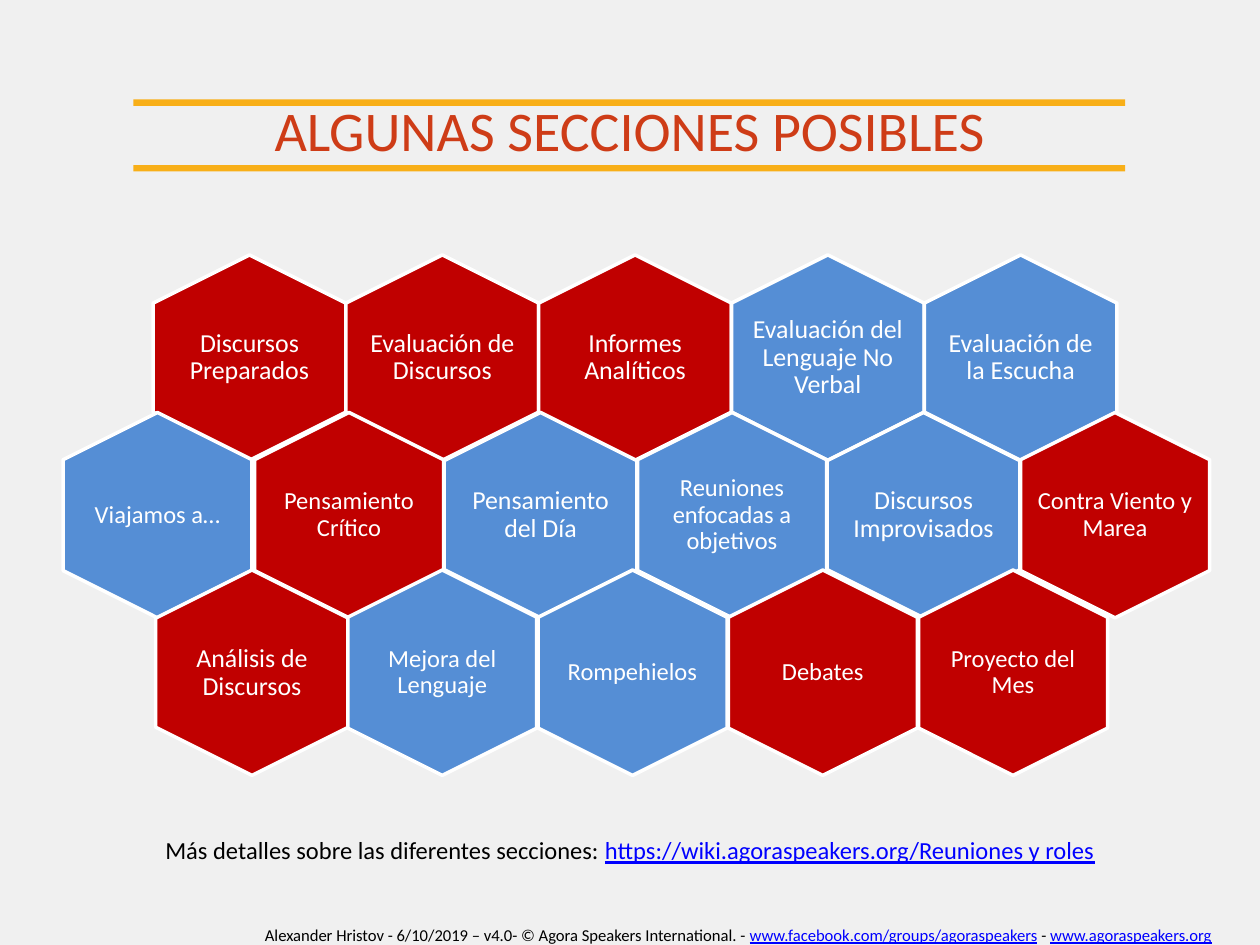
from dataclasses import dataclass

from pptx import Presentation, util as u
from pptx.dml.color import RGBColor
from pptx.enum import shapes, text

SLIDE_W, SLIDE_H = u.Inches(10), u.Inches(7.5)


@dataclass(frozen=True)
class Theme:
    font: str = "Calibri"
    background: str = "F0F0F0"
    rule: str = "F8AF18"
    title: str = "CE3C17"
    body: str = "000000"
    link: str = "0000FF"
    red: str = "C00000"
    blue: str = "558ED5"
    white: str = "FFFFFF"
    title_size: float = 32
    large: float = 14.8
    small: float = 14
    footer_size: float = 9.5


THEME = Theme()
RED, BLUE = THEME.red, THEME.blue
LARGE, SMALL = THEME.large, THEME.small

# Each row: first centre and pitch (% of slide width), then its cells.
ROWS = [
    (19.8, 15.3, [
        ("Discursos Preparados", RED, LARGE),
        ("Evaluación de Discursos", RED, LARGE),
        ("Informes Analíticos", RED, LARGE),
        ("Evaluación del Lenguaje No Verbal", BLUE, LARGE),
        ("Evaluación de la Escucha", BLUE, LARGE),
    ]),
    (12.5, 15.2, [
        ("Viajamos a…", BLUE, SMALL),
        ("Pensamiento Crítico", RED, SMALL),
        ("Pensamiento del Día", BLUE, LARGE),
        ("Reuniones enfocadas a objetivos", BLUE, SMALL),
        ("Discursos Improvisados", BLUE, LARGE),
        ("Contra Viento y Marea", RED, SMALL),
    ]),
    (20, 15.1, [
        ("Análisis de Discursos", RED, LARGE),
        ("Mejora del Lenguaje", BLUE, SMALL),
        ("Rompehielos", BLUE, SMALL),
        ("Debates", RED, SMALL),
        ("Proyecto del Mes", RED, SMALL),
    ]),
]
FIRST_ROW_Y, ROW_PITCH = 37.85, 16.67
HEX_LENGTH = 16.3
HEX_BREADTH = {LARGE: 20.4, SMALL: 20}
LABEL_W, LABEL_H = 13.4, 14.9


def rgb(color):
    return RGBColor.from_string(color)


def box(left, top, width, height):
    """Turn percentages of the slide's width and height into lengths."""
    return [round(share * side / 100) for share, side in
            zip((left, top, width, height), (SLIDE_W, SLIDE_H) * 2)]


def centred(x, y, width, height):
    return box(x - width / 2, y - height / 2, width, height)


def add_filled(s, kind, place, fill):
    sp = s.shapes.add_shape(kind, *place)
    sp.shadow.inherit = False
    sp.fill.solid()
    sp.fill.fore_color.rgb = rgb(fill)
    sp.line.fill.background()
    return sp


def add_text(s, place, runs, size):
    """Add a centred paragraph; runs are (words, colour) pairs."""
    tf = s.shapes.add_textbox(*place).text_frame
    tf.word_wrap = True
    p = tf.paragraphs[0]
    p.alignment = text.PP_ALIGN.CENTER
    p.font.name, p.font.size = THEME.font, u.Pt(size)
    for words, color in runs:
        r = p.add_run()
        r.text = words
        r.font.color.rgb = rgb(color)
        if color == THEME.link:
            r.font.underline = True
    return tf


def add_hexagon(s, x, y, label, fill, size):
    sp = add_filled(s, shapes.MSO_SHAPE.HEXAGON,
                    centred(x, y, HEX_LENGTH, HEX_BREADTH[size]), fill)
    sp.rotation = 90
    sp.line.color.rgb = rgb(THEME.white)
    sp.line.width = u.Pt(2)
    tf = add_text(s, centred(x, y, LABEL_W, LABEL_H), [(label, THEME.white)], size)
    tf.vertical_anchor = text.MSO_ANCHOR.MIDDLE
    tf.margin_left = tf.margin_right = u.Inches(0.05)
    tf.paragraphs[0].line_spacing = 0.9


def add_honeycomb(s):
    for row, (start, pitch, cells) in enumerate(ROWS):
        for col, cell in enumerate(cells):
            add_hexagon(s, start + col * pitch, FIRST_ROW_Y + row * ROW_PITCH, *cell)


def add_header(s):
    for top in (10.53, 17.47):
        add_filled(s, shapes.MSO_SHAPE.RECTANGLE, box(10.6, top, 78.7, 0.67), THEME.rule)
    add_text(s, box(0, 9.47, 100, 8),
             [("ALGUNAS SECCIONES POSIBLES", THEME.title)], THEME.title_size)


def add_references(s):
    add_text(s, box(0, 87.73, 100, 4.53), [
        ("Más detalles sobre las diferentes secciones: ", THEME.body),
        ("https://wiki.agoraspeakers.org/Reuniones y roles", THEME.link),
    ], SMALL)
    add_text(s, box(17.6, 97.2, 82, 2.8), [
        ("Alexander Hristov - 6/10/2019 – v4.0- © Agora Speakers International. - ",
         THEME.body),
        ("www.facebook.com/groups/agoraspeakers", THEME.link),
        (" - ", THEME.body),
        ("www.agoraspeakers.org", THEME.link),
    ], THEME.footer_size)


def main():
    prs = Presentation()
    prs.slide_width, prs.slide_height = SLIDE_W, SLIDE_H
    s = prs.slides.add_slide(prs.slide_layouts[6])
    s.background.fill.solid()
    s.background.fill.fore_color.rgb = rgb(THEME.background)
    add_header(s)
    add_honeycomb(s)
    add_references(s)
    prs.save("out.pptx")


if __name__ == "__main__":
    main()
